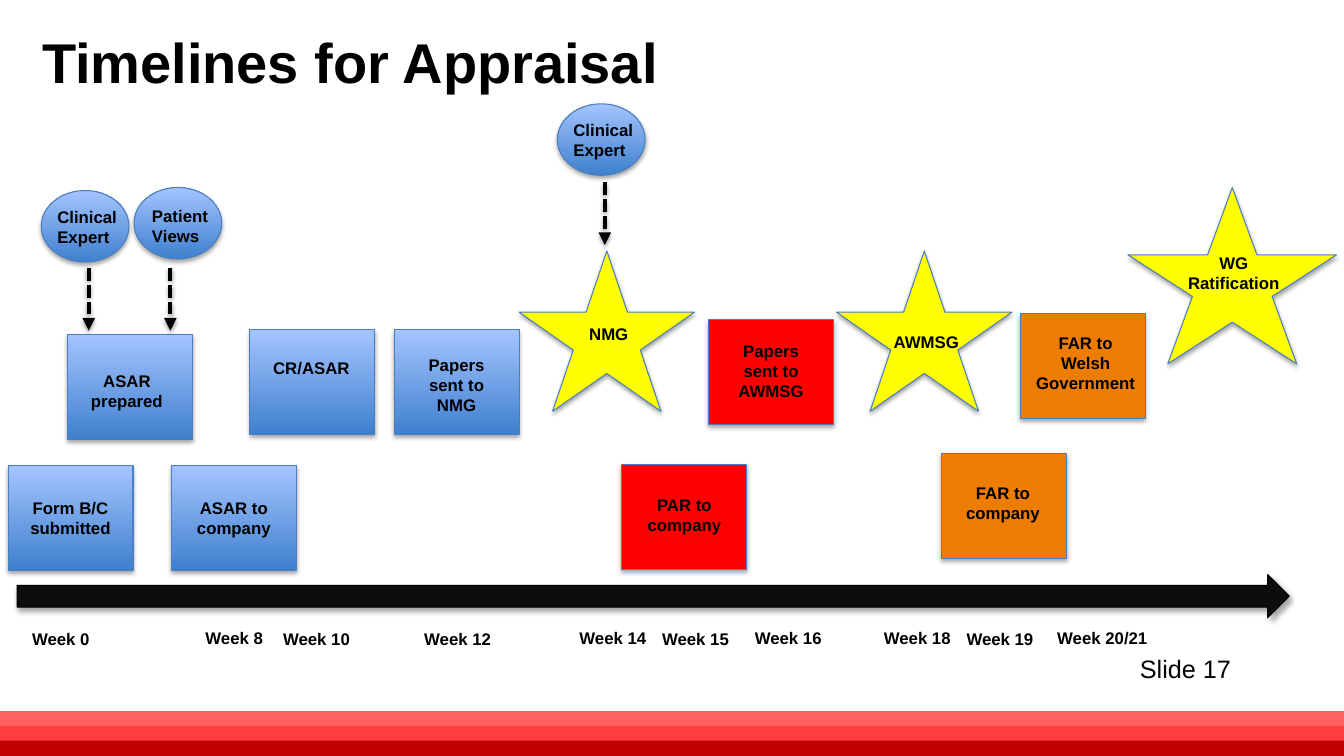
"""Builds the appraisal timeline slide on a grid of tenth-of-an-inch columns and rows."""
from lxml import etree
from pptx import Presentation
from pptx import util as u
from pptx.dml.color import RGBColor
from pptx.enum import dml, shapes, text
from pptx.oxml import parse_xml
from pptx.oxml.ns import nsdecls, qn

BLACK = RGBColor(0x00, 0x00, 0x00)
ARROW_BLACK = RGBColor(0x0D, 0x0D, 0x0D)
BLUE_DARK = RGBColor(0x3F, 0x80, 0xCE)
BLUE_LIGHT = RGBColor(0xA4, 0xC4, 0xFF)
OUTLINE = RGBColor(0x4B, 0x7E, 0xBC)
YELLOW = RGBColor(0xFF, 0xFF, 0x00)
RED = RGBColor(0xFF, 0x00, 0x00)
ORANGE = RGBColor(0xEC, 0x7D, 0x02)
BANDS = (RGBColor(0xFF, 0x61, 0x61), RGBColor(0xFF, 0x3F, 0x3F), RGBColor(0xC0, 0x00, 0x00))
BLUE = (BLUE_DARK, BLUE_LIGHT)

COLUMNS, ROWS = 133.33, 75
BOX_SIZE = (12.4, 10.4)
BUBBLE_SIZE = (8.7, 7.1)
STAR_SIZE = (17.4, 15.9)
LABEL_WIDTH = 10.6
LINE_HEIGHT = 2.05

BOXES = [
    (0.8, 46.2, BLUE, "Form B/C submitted", (1.7, 48.9)),
    (17, 46.2, BLUE, "ASAR to company", (17.9, 48.9)),
    (6.7, 33.2, BLUE, "ASAR prepared", (7.3, 36.3)),
    (24.8, 32.7, BLUE, "CR/ASAR", (25.6, 35)),
    (39.1, 32.7, BLUE, "Papers sent to NMG", (40, 34.7)),
    (61.7, 46.1, RED, "PAR to company", (62.6, 48.6)),
    (70.3, 31.7, RED, "Papers sent to AWMSG", (71.2, 33.3)),
    (93.4, 45, ORANGE, "FAR to company", (94.2, 47.4)),
    (101.2, 31.1, ORANGE, "FAR to\nWelsh Government", (100.7, 32.5)),
]
STARS = [
    (51.5, 24.9, STAR_SIZE, "NMG", (55.1, 31.6), LABEL_WIDTH),
    (83, 24.9, STAR_SIZE, "AWMSG", (86.6, 32.4), LABEL_WIDTH),
    (111.9, 18.6, (20.7, 17.5), "WG\nRatification", (116.1, 24.6), 12.6),
]
BUBBLES = [
    (55.3, 10.3, "Clinical Expert", (55.9, 11.4)),
    (4.1, 18.9, "Clinical Expert", (4.7, 20)),
    (13.3, 18.6, "Patient Views", (14.1, 19.9)),
]
ARROWS = [(16.9, 26.6), (8.8, 26.6), (60, 18.1)]
WEEKS = [
    ("0", 2.2, 61.9), ("8", 19.4, 61.8), ("10", 27.1, 61.9), ("12", 41.1, 61.9),
    ("14", 56.5, 61.8), ("15", 64.7, 61.9), ("16", 73.9, 61.8), ("18", 86.7, 61.8),
    ("19", 94.9, 61.9), ("20/21", 103.9, 61.8),
]


class TimelineSlide:
    """Holds the grid, the style and the slide being drawn."""

    def __init__(self, presentation):
        self.column = presentation.slide_width / COLUMNS
        self.row = presentation.slide_height / ROWS
        self.slide = presentation.slides.add_slide(presentation.slide_layouts[6])
        self.font_name = "Arial"

    def across(self, columns):
        return u.Emu(round(columns * self.column))

    def down(self, rows):
        return u.Emu(round(rows * self.row))

    def frame(self, left, top, width, height):
        return self.across(left), self.down(top), self.across(width), self.down(height)

    def cast_shadow(self, effects, distance, opacity):
        effects.append(parse_xml(
            f'<a:outerShdw {nsdecls("a")} blurRad="40000" dist="{distance}" dir="5400000" '
            f'rotWithShape="0"><a:srgbClr val="000000"><a:alpha val="{opacity}"/>'
            '</a:srgbClr></a:outerShdw>'))

    def shape(self, kind, left, top, size, fill, outline=OUTLINE):
        shape = self.slide.shapes.add_shape(kind, *self.frame(left, top, *size))
        if isinstance(fill, tuple) and not isinstance(fill, RGBColor):
            shape.fill.gradient()
            shape.fill.gradient_angle = 90
            for stop, color in zip(shape.fill.gradient_stops, fill):
                stop.color.rgb = color
        else:
            shape.fill.solid()
            shape.fill.fore_color.rgb = fill
        shape.shadow.inherit = False
        if outline is None:
            shape.line.fill.background()
            return
        shape.line.color.rgb = outline
        shape.line.width = u.Pt(0.75)
        self.cast_shadow(shape.element.spPr.find(qn("a:effectLst")), 23000, 35000)

    def label(self, words, left, top, width, lines=1, height=None, size=12, bold=True,
              align=text.PP_ALIGN.LEFT, anchor=text.MSO_ANCHOR.TOP, wrap=True):
        height = height or 1 + lines * LINE_HEIGHT
        box = self.slide.shapes.add_textbox(*self.frame(left, top, width, height))
        text_frame = box.text_frame
        text_frame.text = words
        text_frame.word_wrap = wrap
        text_frame.vertical_anchor = anchor
        for paragraph in text_frame.paragraphs:
            paragraph.alignment = align
            for run in paragraph.runs:
                run.font.name = self.font_name
                run.font.size = u.Pt(size)
                run.font.bold = bold
                run.font.color.rgb = BLACK

    def dashed_arrow(self, left, top, length=6.2):
        x = self.across(left)
        arrow = self.slide.shapes.add_connector(
            shapes.MSO_CONNECTOR.STRAIGHT, x, self.down(top), x, self.down(top + length))
        arrow.line.color.rgb = BLACK
        arrow.line.width = u.Pt(3)
        arrow.line.dash_style = dml.MSO_LINE.SQUARE_DOT
        properties = arrow.element.spPr
        etree.SubElement(properties.find(qn("a:ln")), qn("a:tailEnd"), type="triangle")
        self.cast_shadow(etree.SubElement(properties, qn("a:effectLst")), 20000, 38000)


def main():
    presentation = Presentation()
    presentation.slide_width = u.Inches(13.333)
    presentation.slide_height = u.Inches(7.5)
    timeline = TimelineSlide(presentation)
    kinds = shapes.MSO_SHAPE
    center = text.PP_ALIGN.CENTER

    for index, color in enumerate(BANDS):
        timeline.shape(kinds.RECTANGLE, 0, 70.55 + index * 1.47, (COLUMNS, 1.6), color, None)
    timeline.shape(kinds.RIGHT_ARROW, 1.7, 57, (126.2, 4.3), ARROW_BLACK, BLACK)

    for left, top, fill, words, place in BOXES:
        timeline.shape(kinds.RECTANGLE, left, top, BOX_SIZE, fill)
        width = 14 if "\n" in words else LABEL_WIDTH
        timeline.label(words, *place, width, len(words.split()), align=center)
    for left, top, size, words, place, width in STARS:
        timeline.shape(kinds.STAR_5_POINT, left, top, size, YELLOW)
        timeline.label(words, *place, width, len(words.split()), align=center)
    for left, top, words, place in BUBBLES:
        timeline.shape(kinds.OVAL, left, top, BUBBLE_SIZE, BLUE)
        timeline.label(words, *place, 9, 2)
    for left, top in ARROWS:
        timeline.dashed_arrow(left, top)
    for week, left, top in WEEKS:
        timeline.label(f"Week {week}", left, top, 12.3 if "/" in week else 9.3)

    timeline.label("Timelines for Appraisal", 3.2, 1.9, 71.6, height=8.3, size=40,
                   anchor=text.MSO_ANCHOR.MIDDLE)
    timeline.label("Slide 17", 112.1, 64.3, 11.1, height=4, size=18, bold=False, wrap=False)
    presentation.save("out.pptx")


if __name__ == "__main__":
    main()
